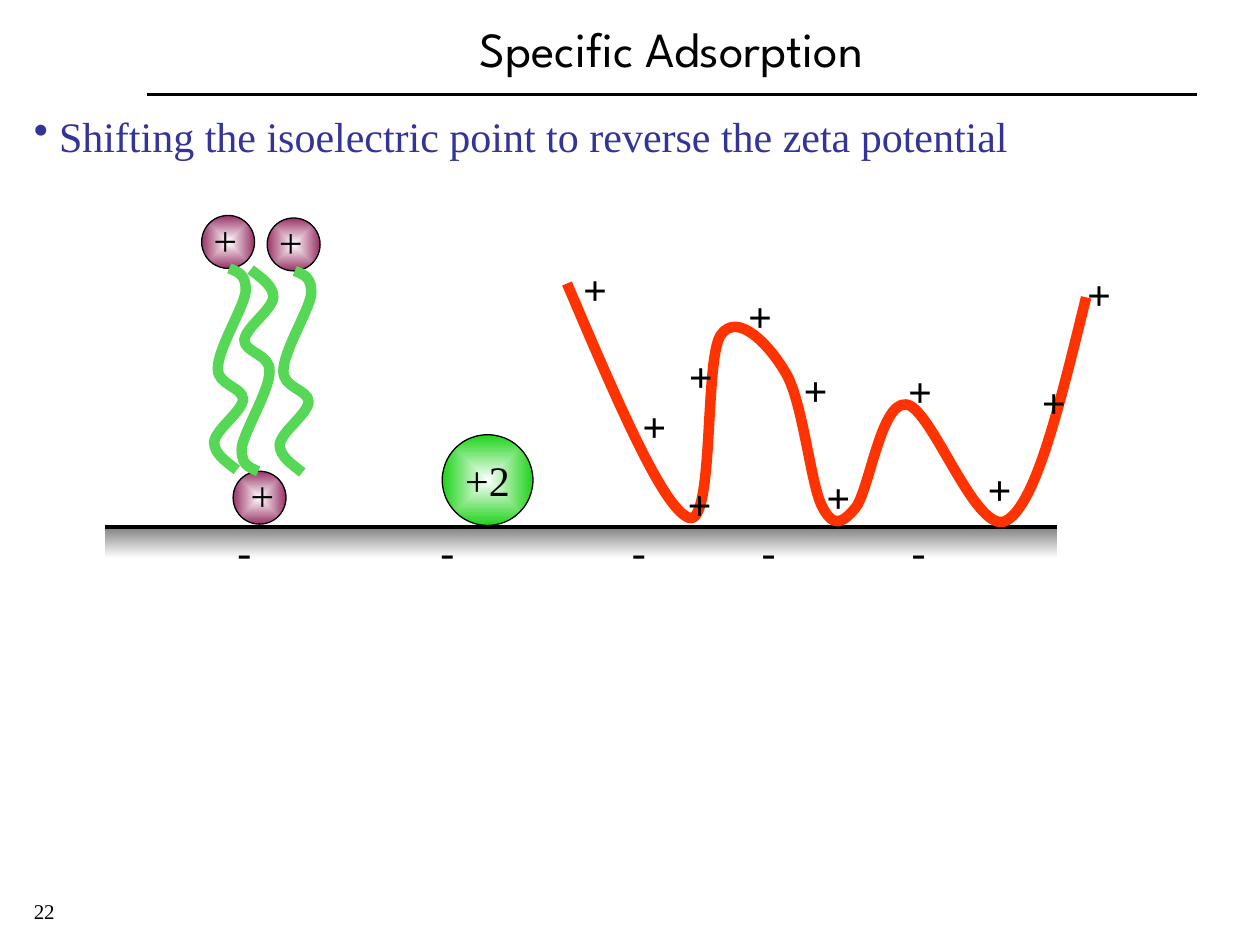
from lxml import etree
from pptx import Presentation
from pptx.dml.color import RGBColor
from pptx.enum.shapes import MSO_CONNECTOR, MSO_SHAPE
from pptx.enum.text import MSO_ANCHOR, PP_ALIGN
from pptx.oxml.ns import qn
from pptx.util import Inches, Pt

STRAIGHT = MSO_CONNECTOR.STRAIGHT
OVAL, RECT = MSO_SHAPE.OVAL, MSO_SHAPE.RECTANGLE
LEFT, CENTER = PP_ALIGN.LEFT, PP_ALIGN.CENTER
TOP, MIDDLE = MSO_ANCHOR.TOP, MSO_ANCHOR.MIDDLE
BLACK, WHITE, GREY, NAVY = "000000", "FFFFFF", "808080", "333399"
PLUM, GREEN, TAIL_GREEN, RED = "993366", "1ED31A", "56D755", "FF3300"

prs = Presentation()
prs.slide_width, prs.slide_height = Inches(10), Inches(7.5)
slide = prs.slides.add_slide(prs.slide_layouts[6])
shapes = slide.shapes

# Grid of 10 columns by 7.5 rows
COL, ROW = prs.slide_width / 10, prs.slide_height / 7.5


def paint(color_format, color):
    color_format.rgb = RGBColor.from_string(color)


def write(frame, text, size=24, font="Times New Roman", color=BLACK, bold=False,
          align=LEFT, anchor=TOP, wrap=True, bullet=None, indent=0.2):
    frame.word_wrap = wrap
    frame.vertical_anchor = anchor
    paragraph = frame.paragraphs[0]
    paragraph.text = text
    paragraph.alignment = align
    if bullet:
        props = paragraph._p.get_or_add_pPr()
        props.set("marL", str(int(indent * COL)))
        props.set("indent", str(int(-indent * COL)))
        etree.SubElement(props, qn("a:buChar")).set("char", bullet)
    paragraph.font.size = Pt(size)
    paragraph.font.name = font
    paragraph.font.bold = bold
    paint(paragraph.font.color, color)


# Title, bullet and page number
for text, left, top, width, height, style in [
    ("Specific Adsorption", 1.08, 0.17, 8.5, 0.42,
     dict(size=28, font="League Spartan", align=CENTER, anchor=MIDDLE)),
    ("Shifting the isoelectric point to reverse the zeta potential",
     0.17, 0.83, 9.58, 0.5, dict(color=NAVY, bullet="•")),
    ("22", 0.17, 7.08, 0.4, 0.3, dict(size=12, wrap=False)),
]:
    box = shapes.add_textbox(int(left * COL), int(top * ROW), int(width * COL), int(height * ROW))
    write(box.text_frame, text, **style)

# Solid surface, shaded below its edge
SURFACE_LEFT, SURFACE_TOP, SURFACE_WIDTH = 0.83, 4.18, 7.56
solid = shapes.add_shape(RECT, int(SURFACE_LEFT * COL), int(SURFACE_TOP * ROW),
                         int(SURFACE_WIDTH * COL), int(0.25 * ROW))
solid.shadow.inherit = False
solid.line.fill.background()
solid.fill.gradient()
solid.fill.gradient_angle = 270
for stop, color in zip(solid.fill.gradient_stops, (GREY, WHITE)):
    paint(stop.color, color)

# Title rule and surface edge
for left, right, y in [(1.17, 9.5, 0.75),
                       (SURFACE_LEFT, SURFACE_LEFT + SURFACE_WIDTH, SURFACE_TOP)]:
    rule = shapes.add_connector(STRAIGHT, int(left * COL), int(y * ROW),
                                int(right * COL), int(y * ROW))
    rule.line.width = Pt(2.25)
    paint(rule.line.color, BLACK)
    etree.SubElement(rule._element.spPr, qn("a:effectLst"))

# Adsorbed ion and surfactant heads
for label, left, top, size, color, turn in [
    ("+2", 3.51, 3.45, 0.72, GREEN, 0),
    ("+", 1.85, 3.74, 0.42, PLUM, 270),
    ("+", 1.6, 1.71, 0.42, PLUM, 90),
    ("+", 2.12, 1.73, 0.42, PLUM, 90),
]:
    ion = shapes.add_shape(OVAL, int(left * COL), int(top * ROW), int(size * COL), int(size * ROW))
    ion.rotation = turn
    ion.shadow.inherit = False
    ion.line.width = Pt(0.75)
    paint(ion.line.color, BLACK)
    ion.fill.gradient()
    for stop, shade in zip(ion.fill.gradient_stops, (WHITE, color)):
        paint(stop.color, shade)
    gradient = ion._element.spPr.find(qn("a:gradFill"))
    gradient.remove(gradient.find(qn("a:lin")))
    radial = etree.SubElement(gradient, qn("a:path"), {"path": "shape"})
    etree.SubElement(radial, qn("a:fillToRect"), dict.fromkeys("ltrb", "50000"))
    write(ion.text_frame, label, align=CENTER, anchor=MIDDLE, wrap=False)

# Surfactant tails share one wave; the polymer has its own. Bezier points follow the start.
wave = [(0.07, 0.03), (0.14, 0.05), (0.13, 0.19), (0.11, 0.32), (-0.09, 0.64),
        (-0.09, 0.79), (-0.1, 0.93), (0.11, 0.94), (0.11, 1.04), (0.1, 1.14),
        (-0.11, 1.28), (-0.12, 1.38), (-0.12, 1.47), (-0.03, 1.53), (0.06, 1.6)]
polymer = [(4.5, 2.25), (4.88, 3.14), (5.26, 4.04), (5.47, 4.11), (5.67, 4.17),
           (5.59, 2.85), (5.72, 2.66), (5.85, 2.47), (6.1, 2.73), (6.23, 2.95),
           (6.37, 3.17), (6.43, 3.82), (6.52, 4.01), (6.61, 4.19), (6.68, 4.16),
           (6.79, 4.03), (6.9, 3.89), (6.99, 3.19), (7.19, 3.21), (7.39, 3.22),
           (7.75, 4.27), (7.99, 4.13), (8.23, 3.99), (8.42, 3.17), (8.62, 2.36)]
chains = [(RED, polymer)]
for x, y, way in [(2.05, 3.74, -1), (1.82, 2.13, 1), (2.34, 2.15, 1)]:
    chains.append((TAIL_GREEN, [(x, y)] + [(x + way * dx, y + way * dy) for dx, dy in wave]))

for color, points in chains:
    grid_points = [(int(x * COL), int(y * ROW)) for x, y in points]
    builder = shapes.build_freeform(*grid_points[0])
    builder.add_line_segments(grid_points[1:], close=False)
    chain = builder.convert_to_shape()
    chain.shadow.inherit = False
    chain.fill.background()
    chain.line.width = Pt(6)
    paint(chain.line.color, color)
    # Every three line ends become one curve
    segments = list(chain._element.iter(qn("a:lnTo")))
    outline = segments[0].getparent()
    for first in range(0, len(segments), 3):
        curve = etree.SubElement(outline, qn("a:cubicBezTo"))
        for segment in segments[first:first + 3]:
            curve.append(segment[0])
            outline.remove(segment)

# Charges: plus along the polymer, minus in the surface
CHARGE_WIDTH, CHARGE_HEIGHT = 0.37, 0.5
plus_places = [(5.84, 2.26), (5, 3.13), (6.46, 3.69), (6.28, 2.84), (5.36, 3.75), (5.37, 2.73),
               (7.11, 2.85), (7.74, 3.63), (8.17, 2.94), (8.53, 2.08), (4.53, 2.04)]
minus_places = [(center - CHARGE_WIDTH / 2, 4.12) for center in (1.94, 3.55, 5.07, 6.1, 7.29)]
for sign, places, style in [("+", plus_places, dict(bold=True)),
                            ("-", minus_places, dict(align=CENTER))]:
    for left, top in places:
        charge = shapes.add_textbox(int(left * COL), int(top * ROW),
                                    int(CHARGE_WIDTH * COL), int(CHARGE_HEIGHT * ROW))
        write(charge.text_frame, sign, **style)

prs.save("out.pptx")
